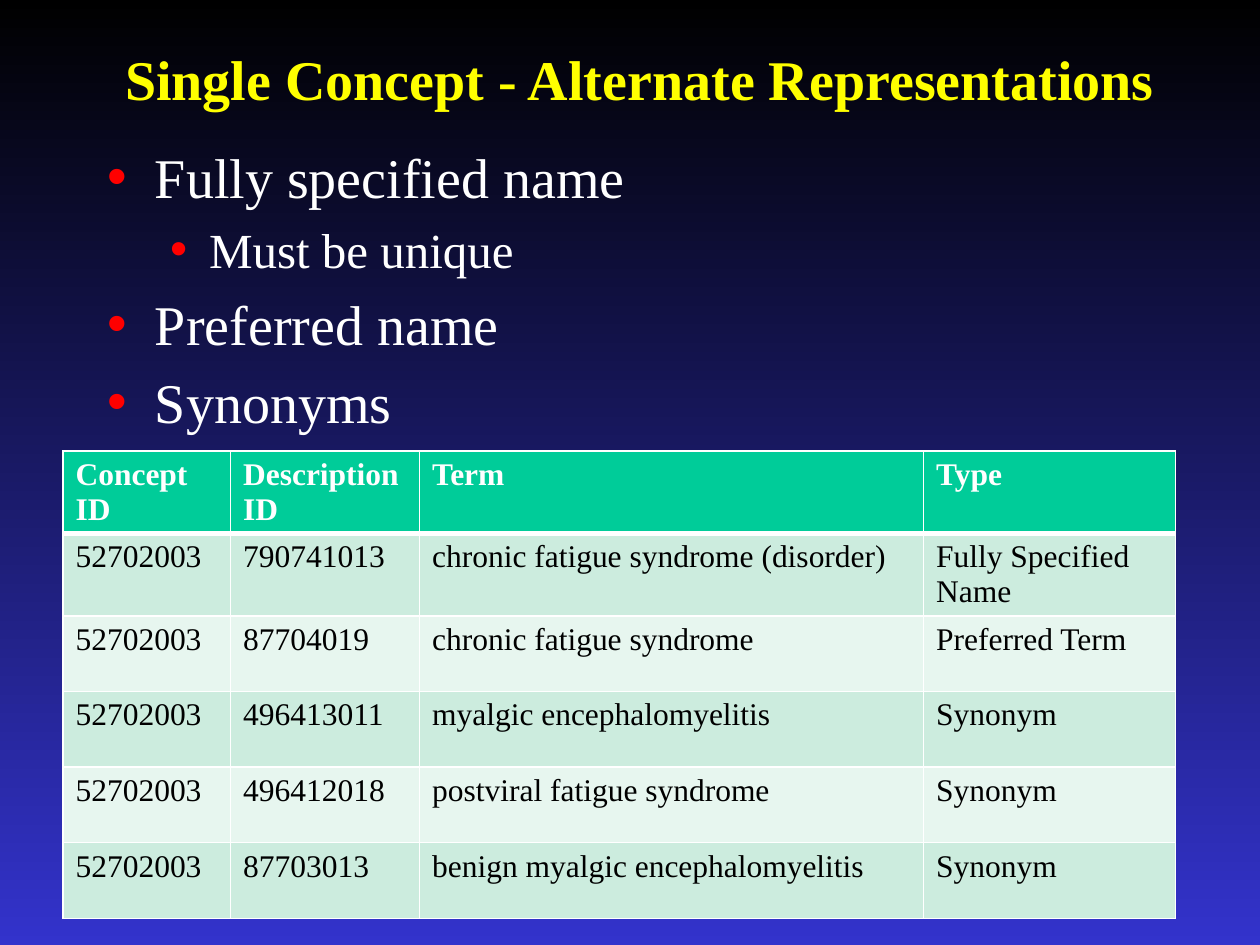
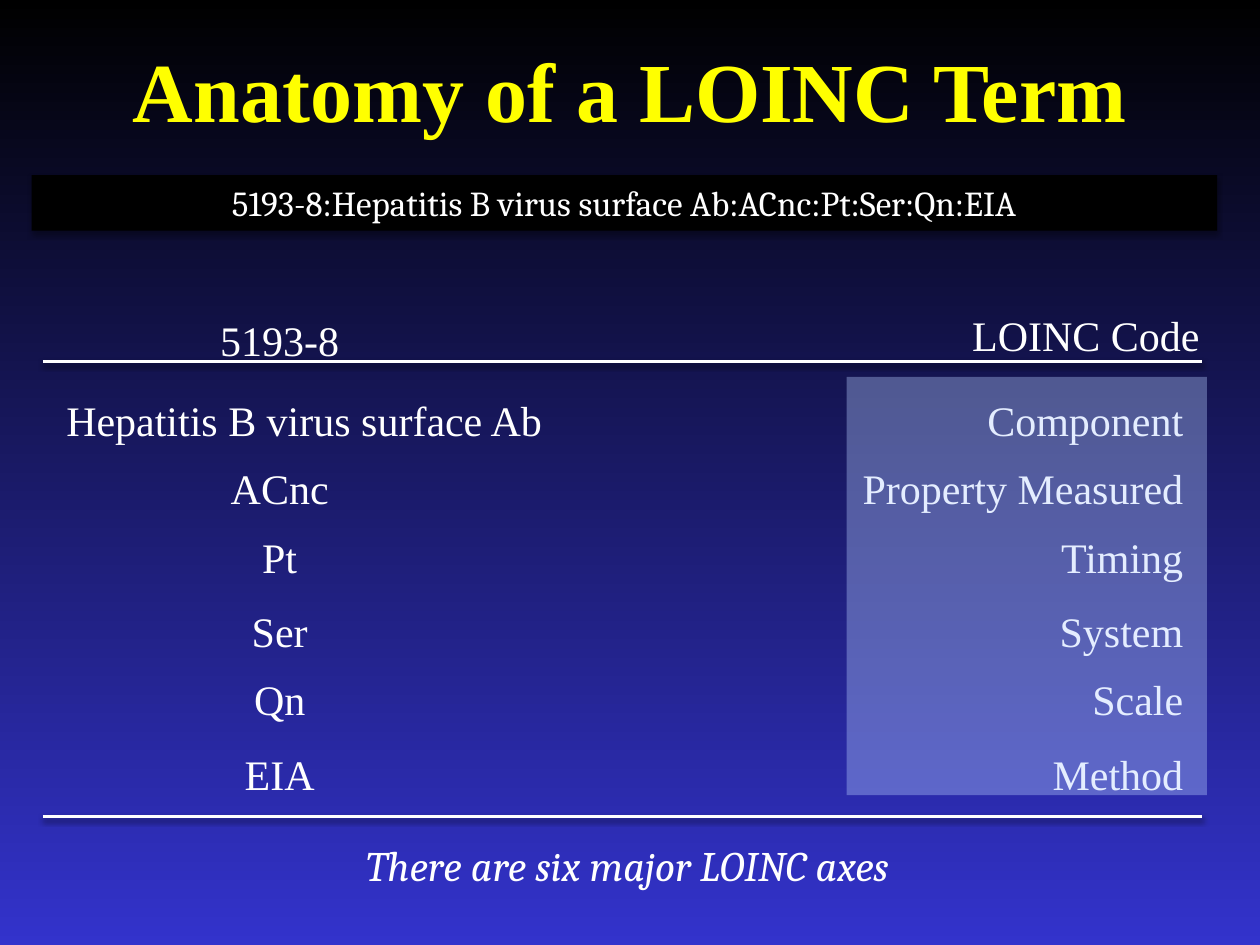
from lxml import etree
from pptx import Presentation
from pptx.dml.color import RGBColor
from pptx.enum.shapes import MSO_CONNECTOR, MSO_SHAPE
from pptx.enum.text import MSO_ANCHOR, MSO_AUTO_SIZE, PP_ALIGN
from pptx.oxml.ns import qn
from pptx.util import Inches, Pt

LEFT, CENTER, RIGHT = PP_ALIGN.LEFT, PP_ALIGN.CENTER, PP_ALIGN.RIGHT
TOP, MIDDLE = MSO_ANCHOR.TOP, MSO_ANCHOR.MIDDLE
FIXED, GROW = MSO_AUTO_SIZE.NONE, MSO_AUTO_SIZE.SHAPE_TO_FIT_TEXT
RECTANGLE, STRAIGHT = MSO_SHAPE.RECTANGLE, MSO_CONNECTOR.STRAIGHT
TITLE_AND_CONTENT, TITLE_ONLY = 1, 5
SERIF, CAMBRIA = "Times New Roman", "Cambria"
WHITE, BLACK, YELLOW, RED, BLUE = "FFFFFF", "000000", "FFFF00", "FF0000", "3333CC"
GREEN, GREEN_TINT, GREEN_PALE, ICE = "00CC99", "CCECDE", "E7F6EF", "B7CFFF"


def rgb(color):
    return RGBColor.from_string(color)


def add_node(parent, tag, **attributes):
    node = etree.SubElement(parent, qn(tag))
    for name, value in attributes.items():
        node.set(name, str(value))
    return node


def add_color(parent, color, alpha=None):
    node = add_node(parent, "a:srgbClr", val=color)
    if alpha is not None:
        add_node(node, "a:alpha", val=alpha * 1000)


def write(para, text, size=24, font=SERIF, color=WHITE, bold=False,
          italic=False, align=LEFT, before=None):
    """Fill a paragraph; before is the space above in percent of a line."""
    para.alignment = align
    if before is not None:
        space = add_node(para._p.get_or_add_pPr(), "a:spcBef")
        add_node(space, "a:spcPct", val=before * 1000)
    span = para.add_run()
    span.text = text
    span.font.size = Pt(size)
    span.font.name = font
    span.font.bold = bold
    span.font.italic = italic
    span.font.color.rgb = rgb(color)


class Builder:
    def __init__(self):
        self.deck = Presentation()
        self.deck.slide_width, self.deck.slide_height = Inches(10), Inches(7.5)
        self.page = None
        # Shared background, running from top to bottom
        fill = self.deck.slide_master.background.fill
        fill.gradient()
        fill.gradient_angle = 270
        for stop, color in zip(fill.gradient_stops, (BLACK, BLUE)):
            stop.color.rgb = rgb(color)

    def place(self, shape, at):
        shape.left, shape.top, shape.width, shape.height = map(Inches, at)

    def new_page(self, layout, title, at, size):
        self.page = self.deck.slides.add_slide(self.deck.slide_layouts[layout])
        box = self.page.shapes.title
        self.place(box, at)
        frame = box.text_frame
        frame.auto_size = FIXED
        frame.vertical_anchor = MIDDLE
        write(frame.paragraphs[0], title, size=size, color=YELLOW, bold=True, align=CENTER)

    def bullets(self, items, at):
        box = self.page.placeholders[1]
        self.place(box, at)
        frame = box.text_frame
        frame.auto_size = FIXED
        styles = ((32, 0.38, 0.38), (28, 0.81, 0.31))
        for index, (level, text) in enumerate(items):
            para = frame.add_paragraph() if index else frame.paragraphs[0]
            size, margin, hang = styles[level]
            para.level = level
            write(para, text, size=size, before=20)
            props = para._p.get_or_add_pPr()
            props.set("marL", str(Inches(margin)))
            props.set("indent", str(-Inches(hang)))
            add_color(add_node(props, "a:buClr"), RED)
            add_node(props, "a:buChar", char="•")

    def text(self, text, at, **style):
        box = self.page.shapes.add_textbox(*map(Inches, at))
        frame = box.text_frame
        frame.word_wrap = True
        frame.auto_size = GROW
        write(frame.paragraphs[0], text, **{"align": CENTER, "before": 20, **style})

    def rectangle(self, at, color, alpha=None):
        shape = self.page.shapes.add_shape(RECTANGLE, *map(Inches, at))
        shape.shadow.inherit = False
        shape.fill.solid()
        shape.fill.fore_color.rgb = rgb(color)
        shape.line.fill.background()
        if alpha is not None:
            tint = shape._element.spPr.find(qn("a:solidFill"))[0]
            add_node(tint, "a:alpha", val=alpha * 1000)
        return shape

    def shadow(self, shape, alpha, distance):
        props = shape._element.spPr
        effects = props.find(qn("a:effectLst"))
        if effects is None:
            effects = add_node(props, "a:effectLst")
        outer = add_node(effects, "a:outerShdw", blurRad=Pt(3.1), dist=Pt(distance),
                         dir=5400000, rotWithShape=0)
        add_color(outer, BLACK, alpha)

    def banner(self, text, at):
        shape = self.rectangle(at, BLACK)
        self.shadow(shape, 35, 1.8)
        frame = shape.text_frame
        frame.word_wrap = True
        frame.auto_size = GROW
        frame.vertical_anchor = TOP
        write(frame.paragraphs[0], text, size=20, font=CAMBRIA, align=CENTER, before=20)

    def rule(self, left, right, top):
        line = self.page.shapes.add_connector(
            STRAIGHT, Inches(left), Inches(top), Inches(right), Inches(top))
        line.line.color.rgb = rgb(WHITE)
        line.line.width = Pt(2)
        self.shadow(line, 38, 1.6)

    def table(self, rows, at, widths, row_height):
        frame = self.page.shapes.add_table(len(rows), len(widths), *map(Inches, at))
        table = frame.table
        for column, width in zip(table.columns, widths):
            column.width = Inches(width)
        for r, values in enumerate(rows):
            table.rows[r].height = Inches(row_height)
            header = r == 0
            fill = GREEN if header else GREEN_TINT if r % 2 else GREEN_PALE
            for c, value in enumerate(values):
                cell = table.cell(r, c)
                # The edge between header and body is heavier
                self.borders(cell, top=3 if r == 1 else 1, bottom=3 if header else 1)
                cell.fill.solid()
                cell.fill.fore_color.rgb = rgb(fill)
                write(cell.text_frame.paragraphs[0], value, size=18, bold=header,
                      color=WHITE if header else BLACK)

    def borders(self, cell, top, bottom):
        props = cell._tc.get_or_add_tcPr()
        for side, width in (("L", 1), ("R", 1), ("T", top), ("B", bottom)):
            edge = add_node(props, f"a:ln{side}", w=Pt(width))
            add_color(add_node(edge, "a:solidFill"), WHITE)


def concept_slide(build):
    build.new_page(TITLE_AND_CONTENT, "Single Concept - Alternate Representations",
                   (0.83, 0.08, 8.5, 1.08), 32)
    build.bullets([(0, "Fully specified name"), (1, "Must be unique"),
                   (0, "Preferred name"), (0, "Synonyms")], (0.75, 1.08, 8.5, 2.58))

    # Descriptions that share one concept
    descriptions = [
        ("790741013", "chronic fatigue syndrome (disorder)", "Fully Specified Name"),
        ("87704019", "chronic fatigue syndrome", "Preferred Term"),
        ("496413011", "myalgic encephalomyelitis", "Synonym"),
        ("496412018", "postviral fatigue syndrome", "Synonym"),
        ("87703013", "benign myalgic encephalomyelitis", "Synonym"),
    ]
    rows = [("Concept ID", "Description ID", "Term", "Type")]
    rows += [("52702003", *description) for description in descriptions]
    build.table(rows, (0.5, 3.58, 8.83, 3.6), (1.33, 1.5, 4, 2), 0.6)


def anatomy_slide(build):
    build.new_page(TITLE_ONLY, "Anatomy of a LOINC Term", (0.75, 0.08, 8.5, 1.25), 48)
    build.banner("5193-8:Hepatitis B virus surface Ab:ACnc:Pt:Ser:Qn:EIA",
                 (0.25, 1.39, 9.41, 0.44))

    # Code heading between banner and axes
    part_left, part_width, height = 0.94, 2.56, 0.5
    build.text("5193-8", (part_left, 2.45, part_width, height))
    build.text("LOINC Code", (7.06, 2.41, part_width, height), align=RIGHT)

    # Six axes: the part of the term and its name
    axes = [
        (3.08, "Hepatitis B virus surface Ab", "Component"),
        (3.62, "ACnc", "Property Measured"),
        (4.17, "Pt", "Timing"),
        (4.76, "Ser", "System"),
        (5.3, "Qn", "Scale"),
        (5.89, "EIA", "Method"),
    ]
    wide_parts = {"Hepatitis B virus surface Ab": (0.25, 4.33)}
    wide_names = {"Property Measured": 3.86}
    names_right = 9.49
    for top, part, name in axes:
        left, width = wide_parts.get(part, (part_left, part_width))
        build.text(part, (left, top, width, height))
        width = wide_names.get(name, part_width)
        build.text(name, (names_right - width, top, width, height), align=RIGHT)

    # Rules, translucent panel over the names, and closing line
    for top in (2.87, 6.48):
        build.rule(0.34, 9.54, top)
    build.rectangle((6.72, 2.99, 2.86, 3.32), ICE, alpha=37)
    build.text("There are six major LOINC axes", (0.55, 6.61, 8.86, height),
               font=CAMBRIA, italic=True, before=50)


def main():
    build = Builder()
    concept_slide(build)
    anatomy_slide(build)
    build.deck.save("out.pptx")


if __name__ == "__main__":
    main()
